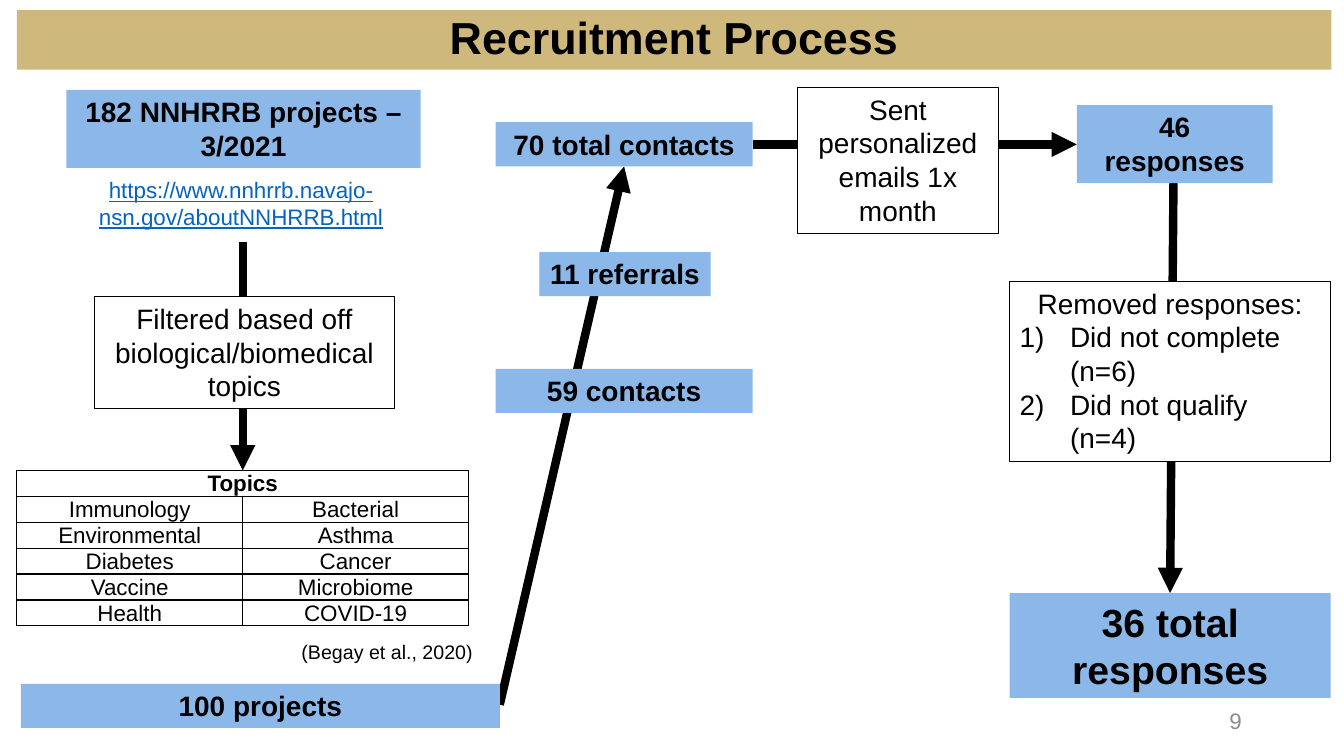
"""Build the Recruitment Process flow slide."""
from lxml import etree
from pptx import Presentation
from pptx.dml.color import RGBColor
from pptx.enum.shapes import MSO_CONNECTOR, MSO_SHAPE
from pptx.enum.text import MSO_ANCHOR, MSO_AUTO_SIZE, PP_ALIGN
from pptx.oxml import parse_xml
from pptx.oxml.ns import qn
from pptx.util import Inches, Pt

RECT, STRAIGHT = MSO_SHAPE.RECTANGLE, MSO_CONNECTOR.STRAIGHT
TOP, MIDDLE = MSO_ANCHOR.TOP, MSO_ANCHOR.MIDDLE
GROW, FIXED = MSO_AUTO_SIZE.SHAPE_TO_FIT_TEXT, MSO_AUTO_SIZE.NONE
LEFT, CENTER, RIGHT = PP_ALIGN.LEFT, PP_ALIGN.CENTER, PP_ALIGN.RIGHT
NS = "http://schemas.openxmlformats.org/drawingml/2006/main"

THEME = {
    "font": "Arial", "black": "000000", "white": "FFFFFF", "blue": "8BB8E8",
    "gold": "CFB87C", "link": "0563C1", "grey": "8C8C8C",
    "title": 32, "total": 28, "body": 20, "small": 16, "cite": 14,
    "arrow": 6, "outline": 0.75, "border": 1,
}

prs = Presentation()
prs.slide_width, prs.slide_height = Inches(13.333), Inches(7.5)
s = prs.slides.add_slide(prs.slide_layouts[6])
COL, ROW = prs.slide_width / 160, prs.slide_height / 90


def grid(*cells):
    """Turn alternating columns and rows into lengths."""
    return [round(v * (ROW if i % 2 else COL)) for i, v in enumerate(cells)]


def write(tf, lines, size, color="black", bold=False, underline=False, align=CENTER, **frame):
    """Fill a text frame with one paragraph per line."""
    for name, value in frame.items():
        setattr(tf, name, value)
    font = {"name": THEME["font"], "size": Pt(THEME[size]), "bold": bold, "underline": underline}
    for i, line in enumerate(lines):
        p = tf.paragraphs[0] if i == 0 else tf.add_paragraph()
        p.alignment = align
        r = p.add_run()
        r.text = line
        for name, value in font.items():
            setattr(r.font, name, value)
        r.font.color.rgb = RGBColor.from_string(THEME[color])


ARROWS = [
    (139.7, 21.8, 139.3, 70.6),
    (89.6, 17.2, 128.2, 17.2),
    (59.5, 83.9, 74.3, 19.8),
    (28.9, 28.8, 28.9, 56),
]
for ends in ARROWS:
    c = s.shapes.add_connector(STRAIGHT, *grid(*ends))
    c.line.color.rgb = RGBColor.from_string(THEME["black"])
    c.line.width = Pt(THEME["arrow"])
    etree.SubElement(c.line._get_or_add_ln(), qn("a:tailEnd"), type="triangle")
    etree.SubElement(c._element.spPr, qn("a:effectLst"))

TOPICS = [
    ("Topics", ""),
    ("Immunology", "Bacterial"),
    ("Environmental", "Asthma"),
    ("Diabetes", "Cancer"),
    ("Vaccine", "Microbiome"),
    ("Health", "COVID-19"),
]
tb = s.shapes.add_table(len(TOPICS), 2, *grid(2, 56, 53.8, 14.4)).table
tb.cell(0, 0).merge(tb.cell(0, 1))
INSETS = {"margin_left": 0.01, "margin_right": 0.01, "margin_top": 0.01, "margin_bottom": 0}
for i, topics in enumerate(TOPICS):
    for j, topic in enumerate(topics):
        cell = tb.cell(i, j)
        cell.fill.solid()
        cell.fill.fore_color.rgb = RGBColor.from_string(THEME["white"])
        cell.vertical_anchor = MIDDLE
        for name, value in INSETS.items():
            setattr(cell, name, Inches(value))
        if topic:
            write(cell.text_frame, [topic], "small", bold=i == 0)
        for k, side in enumerate("LRTB"):
            cell._tc.get_or_add_tcPr().insert(k, parse_xml(
                f'<a:ln{side} xmlns:a="{NS}" w="{Pt(THEME["border"])}"><a:solidFill>'
                f'<a:srgbClr val="{THEME["black"]}"/></a:solidFill></a:ln{side}>'))

STEP = {"size": "body", "bold": True}
NOTE = {"size": "body"}
BOXES = [
    ("blue", (7.9, 10.7, 42.2, 9.3), ["182 NNHRRB projects – 3/2021"], STEP),
    ("blue", (2.5, 81.4, 57, 5.25), ["100 projects"], STEP),
    ("blue", (59, 43.9, 30.6, 5.25), ["59 contacts"], STEP),
    ("white", (94.9, 10.4, 24, 17.4), ["Sent personalized emails 1x month"], NOTE),
    ("gold", (2, 1.2, 156.5, 7.1), ["Recruitment Process"],
     {"size": "title", "bold": True, "vertical_anchor": MIDDLE, "auto_size": FIXED}),
    ("blue", (128.2, 12.5, 23.3, 9.3), ["46 responses"], STEP),
    ("white", (11.2, 35.3, 35.8, 13.3), ["Filtered based off biological/biomedical topics"], NOTE),
    ("blue", (64.2, 30, 20.4, 5.25), ["11 referrals"], STEP | {"word_wrap": False}),
    ("blue", (59, 14.55, 30.6, 5.25), ["70 total contacts"], STEP),
    ("blue", (120.2, 70.6, 38.2, 12.5), ["36 total responses"], {"size": "total", "bold": True}),
    ("white", (120.2, 33.5, 38.2, 21.4),
     ["Removed responses:", "Did not complete (n=6)", "Did not qualify (n=4)"], NOTE),
]
for fill, place, lines, style in BOXES:
    sp = s.shapes.add_shape(RECT, *grid(*place))
    sp.shadow.inherit = False
    sp.fill.solid()
    sp.fill.fore_color.rgb = RGBColor.from_string(THEME[fill])
    if fill == "white":
        sp.line.color.rgb = RGBColor.from_string(THEME["black"])
        sp.line.width = Pt(THEME["outline"])
    else:
        sp.line.fill.background()
    tf = sp.text_frame
    write(tf, lines, **{"word_wrap": True, "vertical_anchor": TOP, "auto_size": GROW} | style)
    if fill == "gold":
        tf.paragraphs[0].line_spacing = 0.9
    for p in tf.paragraphs[1:]:
        p.alignment = LEFT
        pPr = p._p.get_or_add_pPr()
        pPr.set("marL", str(Inches(0.5)))
        pPr.set("indent", str(Inches(-0.5)))
        etree.SubElement(pPr, qn("a:buFont"), typeface=THEME["font"])
        etree.SubElement(pPr, qn("a:buAutoNum"), type="arabicParenR")

LABELS = [
    ((7.6, 20.4, 42.2, 7.7), "https://www.nnhrrb.navajo-nsn.gov/aboutNNHRRB.html",
     {"size": "small", "color": "link", "underline": True, "auto_size": GROW}),
    ((113, 83.4, 36, 4.8), "9",
     {"size": "small", "color": "grey", "align": RIGHT, "vertical_anchor": MIDDLE}),
    ((34.7, 75.6, 22.9, 4.1), "(Begay et al., 2020)",
     {"size": "cite", "align": LEFT, "word_wrap": False, "auto_size": GROW}),
]
for place, text, style in LABELS:
    tf = s.shapes.add_textbox(*grid(*place)).text_frame
    write(tf, [text], **{"word_wrap": True} | style)

prs.save("out.pptx")
